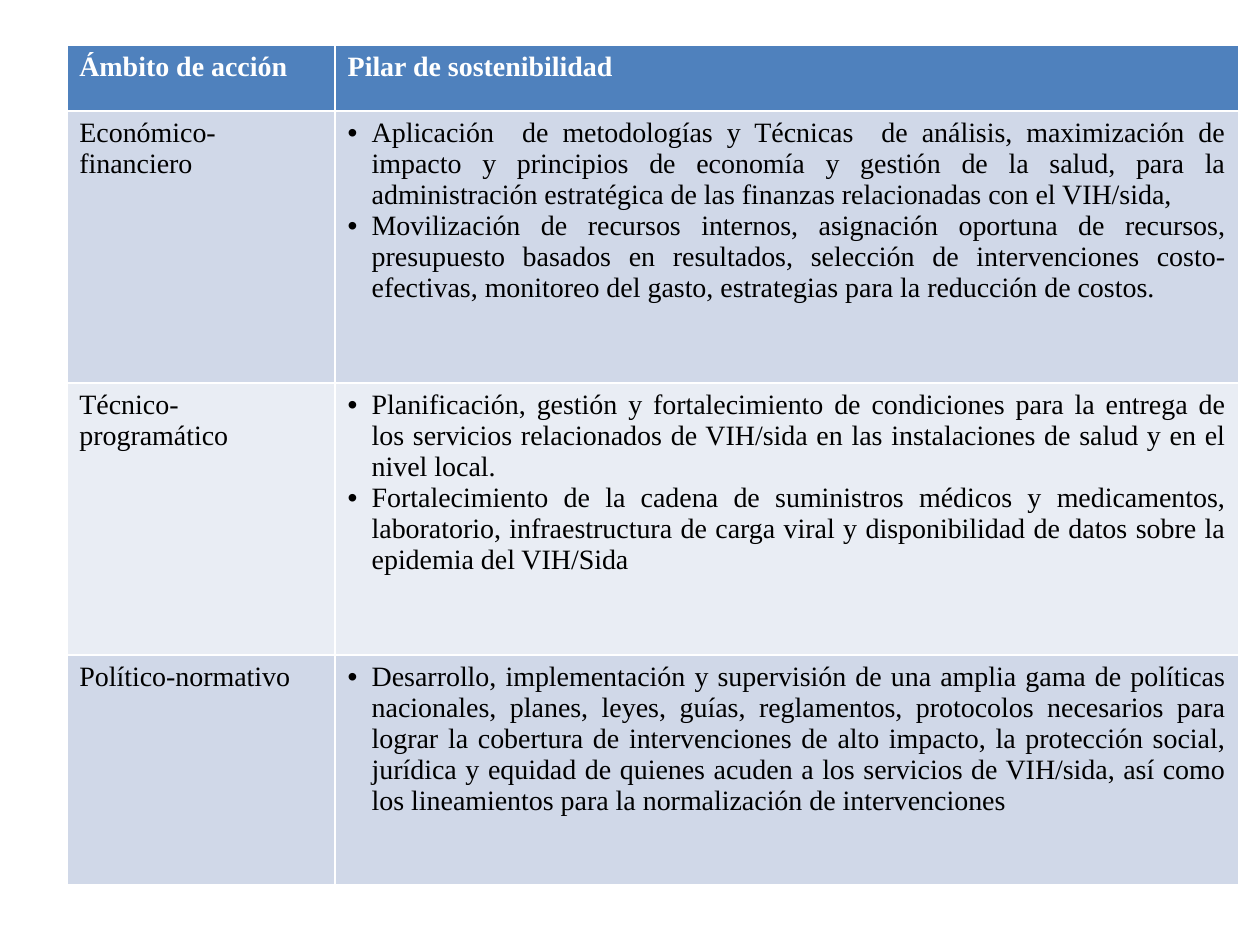
"""Builds a slide with a table of sustainability pillars by field of action."""
from lxml import etree
from pptx import Presentation, util as u
from pptx.dml.color import RGBColor
from pptx.enum import text
from pptx.oxml.ns import qn

HEADINGS = ("Ámbito de acción", "Pilar de sostenibilidad")
FIELDS = [
    ("Económico-financiero", [
        "Aplicación  de metodologías y Técnicas  de análisis, maximización de impacto y principios "
        "de economía y gestión de la salud, para la administración estratégica de las finanzas "
        "relacionadas con el VIH/sida, ",
        "Movilización de recursos internos, asignación oportuna de recursos, presupuesto basados en "
        "resultados, selección de intervenciones costo-efectivas, monitoreo del gasto, estrategias "
        "para la reducción de costos.",
    ]),
    ("Técnico-programático", [
        "Planificación, gestión y fortalecimiento de condiciones para la entrega de los servicios "
        "relacionados de VIH/sida en las instalaciones de salud y en el nivel local.",
        "Fortalecimiento de la cadena de suministros médicos y medicamentos, laboratorio, "
        "infraestructura de carga viral y disponibilidad de datos sobre la epidemia del VIH/Sida",
    ]),
    ("Político-normativo", [
        "Desarrollo, implementación y supervisión de una amplia gama de políticas nacionales, planes, "
        "leyes, guías, reglamentos, protocolos necesarios para lograr la cobertura de intervenciones "
        "de alto impacto, la protección social, jurídica y equidad de quienes acuden a los servicios "
        "de VIH/sida, así como los lineamientos para la normalización de intervenciones",
    ]),
]
COLUMN_WIDTHS = (2.13, 7.17)
ROW_HEIGHTS = (0.52, 2.16, 2.16, 1.82)
LEFT, TOP = 0.53, 0.36
INDENT = u.Inches(0.19)
FONT, SIZE = "Times New Roman", u.Pt(16)
WHITE = RGBColor(0xFF, 0xFF, 0xFF)
BLACK = RGBColor(0x00, 0x00, 0x00)
HEADER_FILL = RGBColor(0x4F, 0x81, 0xBD)
BANDS = (RGBColor(0xD0, 0xD8, 0xE8), RGBColor(0xE9, 0xED, 0xF4))


def add_bullet(paragraph):
    """Gives the paragraph a hanging bullet."""
    properties = paragraph._p.get_or_add_pPr()
    properties.set("marL", str(INDENT))
    properties.set("indent", str(-INDENT))
    etree.SubElement(properties, qn("a:buFont"), typeface="Arial")
    etree.SubElement(properties, qn("a:buChar"), char="•")


def fill_cell(cell, lines, fill, color, bold=False, bulleted=False):
    """Writes justified lines into a coloured cell."""
    cell.fill.solid()
    cell.fill.fore_color.rgb = fill
    cell.text_frame.text = "\n".join(lines)
    for paragraph in cell.text_frame.paragraphs:
        paragraph.alignment = text.PP_ALIGN.JUSTIFY
        if bulleted:
            add_bullet(paragraph)
        for run in paragraph.runs:
            run.font.name, run.font.size = FONT, SIZE
            run.font.bold = bold
            run.font.color.rgb = color


def main():
    """Lays out the table and saves the deck."""
    deck = Presentation()
    deck.slide_width, deck.slide_height = u.Inches(10), u.Inches(7.5)
    slide = deck.slides.add_slide(deck.slide_layouts[6])
    pillars = slide.shapes.add_table(
        len(ROW_HEIGHTS), len(COLUMN_WIDTHS), u.Inches(LEFT), u.Inches(TOP),
        u.Inches(sum(COLUMN_WIDTHS)), u.Inches(sum(ROW_HEIGHTS))).table
    for column, width in zip(pillars.columns, COLUMN_WIDTHS):
        column.width = u.Inches(width)
    for row, height in zip(pillars.rows, ROW_HEIGHTS):
        row.height = u.Inches(height)
    for column, heading in enumerate(HEADINGS):
        fill_cell(pillars.cell(0, column), [heading], HEADER_FILL, WHITE, bold=True)
    for index, (field, points) in enumerate(FIELDS):
        band = BANDS[index % len(BANDS)]
        fill_cell(pillars.cell(index + 1, 0), [field], band, BLACK)
        fill_cell(pillars.cell(index + 1, 1), points, band, BLACK, bulleted=True)
    deck.save("out.pptx")


if __name__ == "__main__":
    main()
